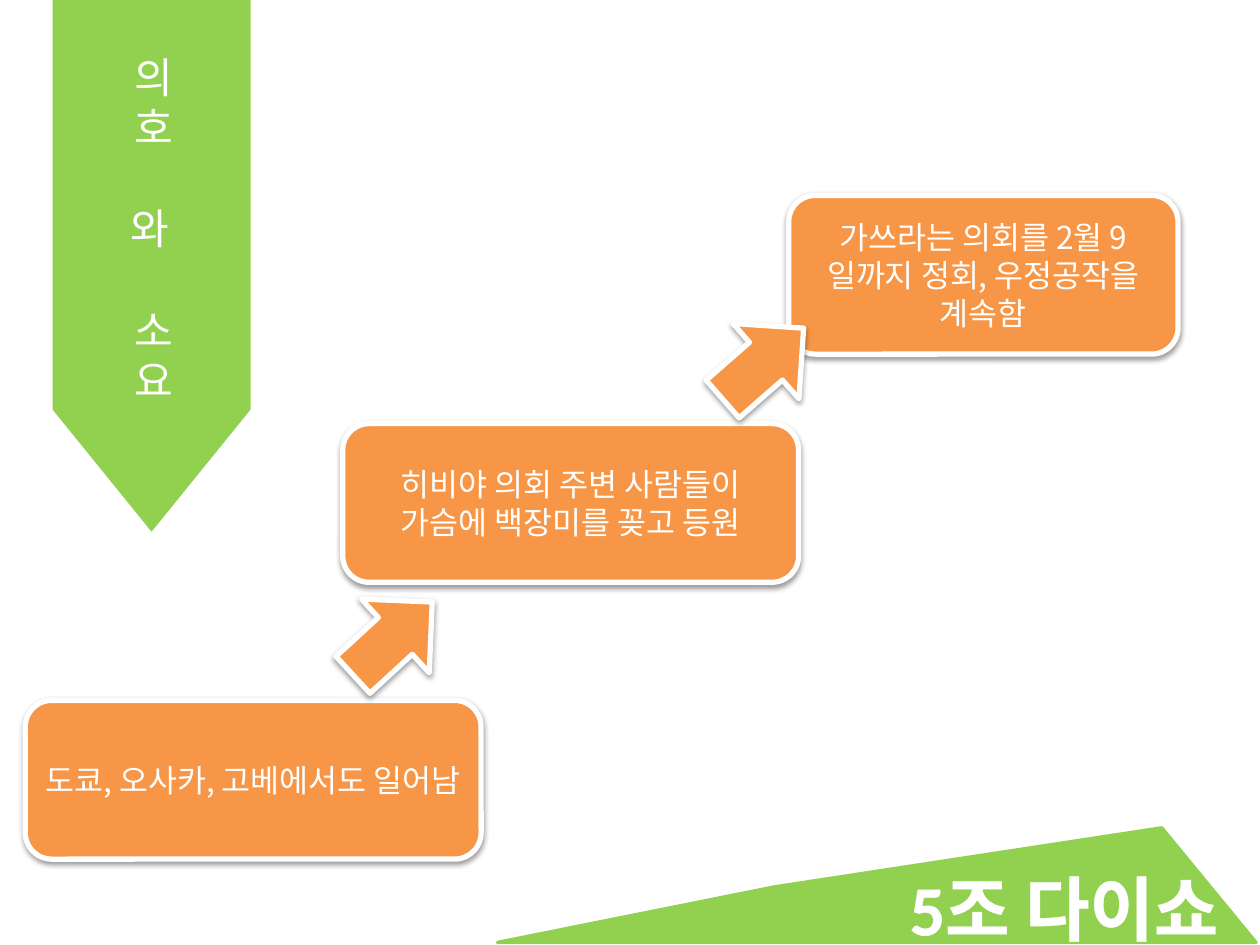
from lxml.etree import SubElement
from pptx import Presentation
from pptx.dml.color import RGBColor
from pptx.enum.shapes import MSO_SHAPE
from pptx.enum.text import MSO_ANCHOR, PP_ALIGN
from pptx.oxml.ns import qn
from pptx.util import Cm, Pt

HUES = {"green": "92D050", "orange": "F79646", "white": "FFFFFF", "black": "000000"}


def hue(name):
    return RGBColor.from_string(HUES[name])


def write(shape, text, size=18, font="Noto Sans CJK KR", bold=None,
          anchor=MSO_ANCHOR.TOP, gap=0, edge=None):
    """Set centred white text, one paragraph a line; edge outlines the letters."""
    frame = shape.text_frame
    frame.word_wrap = True
    frame.vertical_anchor = anchor
    for i, line in enumerate(text.split("\n")):
        para = frame.add_paragraph() if i else frame.paragraphs[0]
        para.alignment = PP_ALIGN.CENTER
        if i and gap:
            para.space_before = Pt(gap)
        run = para.add_run()
        run.text = line
        run.font.size, run.font.name, run.font.bold = Pt(size), font, bold
        run.font.color.rgb = hue("white")
        if edge:
            props = run.font._element
            rim = props.makeelement(qn("a:ln"), {"w": str(Pt(edge))})
            fill = SubElement(rim, qn("a:solidFill"))
            SubElement(fill, qn("a:srgbClr"), val=HUES["white"])
            props.insert(0, rim)


def paint(shape, fill, line=None, width=0):
    shape.shadow.inherit = False
    shape.fill.solid()
    shape.fill.fore_color.rgb = hue(fill)
    if line:
        shape.line.color.rgb = hue(line)
        shape.line.width = Pt(width)
    else:
        shape.line.fill.background()


def add_block(slide, kind, x, y, w, h, turn=0):
    """Add an orange shape with a white rim and a soft shadow below."""
    shape = slide.shapes.add_shape(kind, Cm(x), Cm(y), Cm(w), Cm(h))
    shape.rotation = turn
    paint(shape, "orange", "white", 3)
    glow = SubElement(shape._element.spPr.find(qn("a:effectLst")), qn("a:outerShdw"),
                      blurRad="40000", dist="20000", dir="5400000", rotWithShape="0")
    tint = SubElement(glow, qn("a:srgbClr"), val=HUES["black"])
    SubElement(tint, qn("a:alpha"), val="38000")
    return shape


def add_ribbon(slide, x, y, w, h):
    # The pentagon points right, so it is laid flat and turned about its centre
    shape = slide.shapes.add_shape(MSO_SHAPE.PENTAGON, Cm(x + (w - h) / 2),
                                   Cm(y + (h - w) / 2), Cm(h), Cm(w))
    shape.rotation = 90
    shape.adjustments[0] = 0.617
    paint(shape, "green")
    # Narrow box: one letter a line
    label = slide.shapes.add_textbox(Cm(x + 1.25), Cm(y + 0.91), Cm(1.6), Cm(8.2))
    write(label, "의호\n와 \n소요", size=24, font="Arial", gap=29)


def add_footer(slide, x, y, w, h):
    # Green hill
    dots = [(5.59, 1.19), (13.39, 0), (w, h), (0, h)]
    dots = [(Cm(x + a), Cm(y + b)) for a, b in dots]
    pen = slide.shapes.build_freeform(*dots[0])
    pen.add_line_segments(dots[1:], close=True)
    paint(pen.convert_to_shape(), "green", "green", 2)
    # Team name
    label = slide.shapes.add_textbox(Cm(x + 7.52), Cm(y + 0.63), Cm(7.8), Cm(1.96))
    write(label, "5조 다이쇼", size=40, font="Calibri", bold=True, edge=1.45)


def add_steps(slide, x, y):
    # Boxes, from the top step down
    steps = [
        (15.39, 0, 7.85, "가쓰라는 의회를 2월 9일까지 정회, 우정공작을 계속함"),
        (6.4, 4.6, 9.19, "히비야 의회 주변 사람들이 가슴에 백장미를 꽂고 등원"),
        (0, 10.18, 9.19, "도쿄, 오사카, 고베에서도 일어남"),
    ]
    for left, top, wide, text in steps:
        box = add_block(slide, MSO_SHAPE.ROUNDED_RECTANGLE, x + left, y + top, wide, 3.2)
        write(box, text, anchor=MSO_ANCHOR.MIDDLE)
    # Arrows climbing between them
    for left, top, turn in [(6.32, 7.92, 317.4), (13.79, 2.38, 318.8)]:
        add_block(slide, MSO_SHAPE.RIGHT_ARROW, x + left, y + top, 2.17, 2.02, turn)


def main():
    deck = Presentation()
    deck.slide_width, deck.slide_height = Cm(25.4), Cm(19.05)
    slide = deck.slides.add_slide(deck.slide_layouts[6])
    add_ribbon(slide, 1.06, 0, 3.99, 10.72)
    add_footer(slide, 10.03, 16.69, 15.29, 2.31)
    add_steps(slide, 0.51, 3.94)
    deck.save("out.pptx")


if __name__ == "__main__":
    main()
